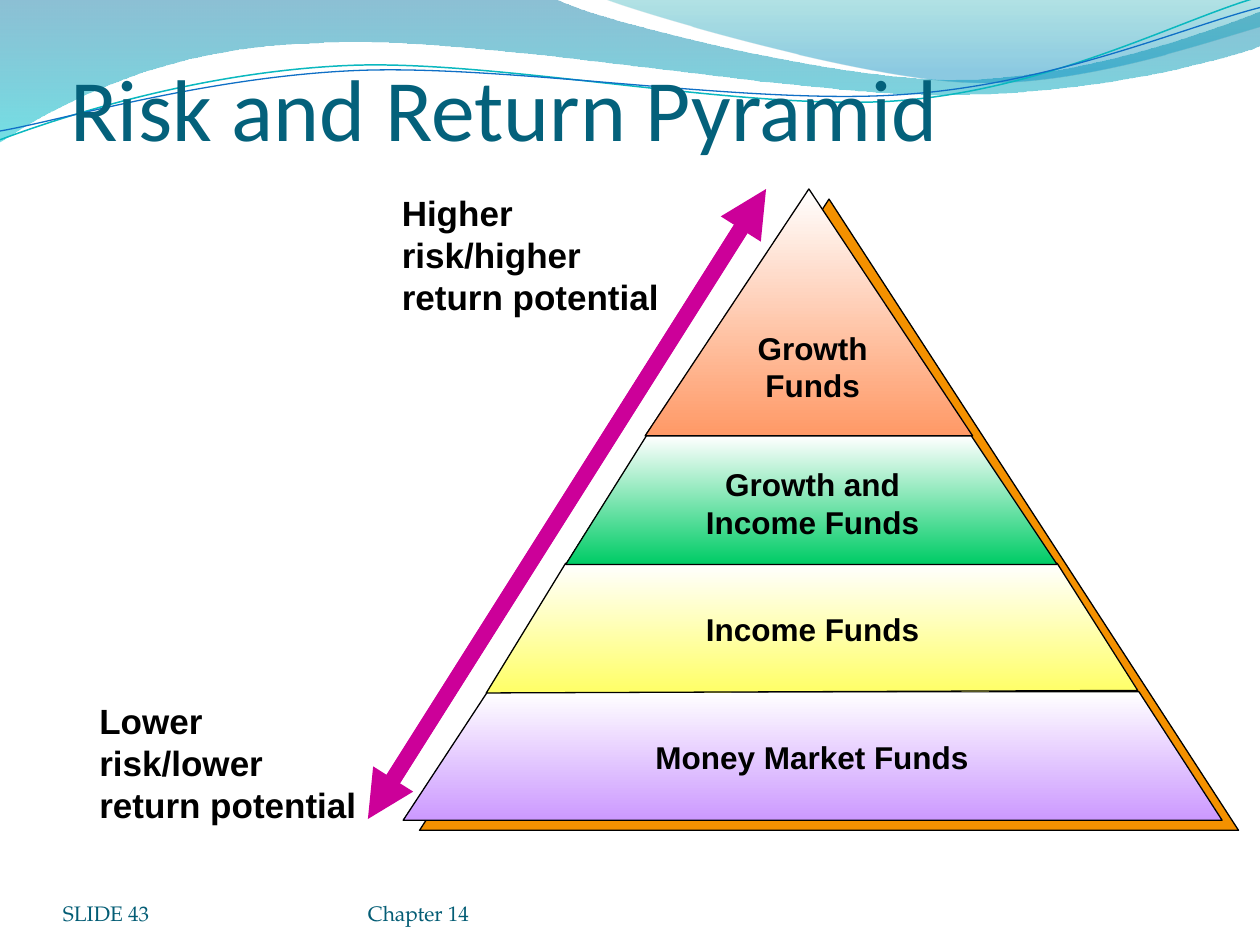
"""Build the risk and return pyramid slide."""
from lxml import etree
from pptx import Presentation, util as u
from pptx.dml.color import RGBColor
from pptx.enum import shapes, text
from pptx.oxml.ns import qn

THEME = {
    "title": ("Calibri", 50, "04617B", False),
    "footer": ("TeX Gyre Pagella", 12, "045D75", False),
    "band": ("Arial", 18, "000000", True),
    "note": ("Arial", 20, "000000", True),
    "outline": "000000", "arrow": "CC0099", "shade": "F49100",
}
TITLE = "Risk and Return Pyramid"
FOOTERS = [("SLIDE 43", (0.5, 6.95, 2.33, 0.4)),
           ("Chapter 14", (2.92, 6.95, 3.67, 0.4))]
WAVES = [
    {"paths": [[(0, 0)], [(4.4, -0.01)],
               [(4.76, 0.17), (6.64, 0.63), (7.58, 0.63)],
               [(8.53, 0.63), (9.58, 0.26), (10, 0.09)], [(10.01, 0.36)],
               [(9.83, 0.44), (8.7, 0.76), (7.46, 0.75)],
               [(6.22, 0.75), (3.82, 0.28), (2.57, 0.34)],
               [(1.29, 0.36), (0.46, 0.83), (-0.01, 1.13)]],
     "grad": [(0, "0074A1", 45), (1, "00C6CF", 55)]},
    {"paths": [[(4.79, -0.01)], [(5.09, 0.11), (6.82, 0.62), (7.69, 0.65)],
               [(8.56, 0.69), (9.61, 0.32), (10, 0.21)], [(10, 0)]],
     "grad": [(0, "00A1A9", 30), (0.8, "008BBF", 45)]},
    {"paths": [[(0, 1.11)], [(0.48, 0.93), (1.58, 0.57), (2.77, 0.52)],
               [(3.95, 0.47), (5.93, 0.89), (7.13, 0.8)],
               [(8.33, 0.71), (9.38, 0.15), (9.98, -0.02)]],
     "line": ("0AB8BF", 0.85)},
    {"paths": [[(0, 1.04)], [(0.47, 0.96), (1.64, 0.61), (2.83, 0.56)],
               [(4.03, 0.51), (5.97, 0.84), (7.17, 0.75)],
               [(8.36, 0.67), (9.41, 0.21), (10, 0.06)]],
     "line": ("0F6FC6", 0.75)},
]
SHADE_BOX = (3.33, 1.58, 6.5, 5.01)
PEAK = ("FF9966", (5.12, 1.5, 2.6, 1.96))
BANDS = [
    ("CC99FF", [(3.2, 6.51), (3.87, 5.49), (9.04, 5.49), (9.7, 6.51)]),
    ("FFFF66", [(3.86, 5.5), (4.49, 4.47), (8.39, 4.47), (9.03, 5.48)]),
    ("00CC66", [(4.49, 4.48), (5.13, 3.46), (7.71, 3.46), (8.39, 4.48)]),
]
LABELS = [("Money Market Funds", (5.1, 5.81, 2.69, 0.4)),
          ("Income Funds", (5.5, 4.79, 1.9, 0.4)),
          ("Growth and\nIncome Funds", (5.5, 3.64, 1.9, 0.7)),
          ("Growth\nFunds", (5.91, 2.56, 1.08, 0.7))]
ARROWS = [
    ((6.08, 1.5), (3.08, 6.25), "headEnd",
     "Higher risk/higher\nreturn potential", (3.09, 1.47, 2.58, 0.77)),
    ((5.92, 1.75), (2.92, 6.5), "tailEnd",
     "Lower risk/lower\nreturn potential", (0.69, 5.5, 2.39, 0.77)),
]


def rgb(color):
    return RGBColor.from_string(color)


def inches(values):
    return [u.Inches(v) for v in values]


def set_line(sp, color, width):
    sp.line.color.rgb = rgb(color)
    sp.line.width = u.Pt(width)


def set_gradient(sp, stops):
    sp.fill.gradient()
    sp.fill.gradient_angle = 270
    for stop, (position, color, _) in zip(sp.fill.gradient_stops, stops):
        stop.position = position
        stop.color.rgb = rgb(color)
    for clr, (_, _, opacity) in zip(sp._element.spPr.iter(qn("a:srgbClr")), stops):
        if opacity < 100:
            etree.SubElement(clr, qn("a:alpha"), val=str(opacity * 1000))


def set_band(sp, color):
    sp.shadow.inherit = False
    set_gradient(sp, [(0, "FFFFFF", 100), (1, color, 100)])
    set_line(sp, THEME["outline"], 0.75)


def add_outline(s, points, close=True):
    points = [inches(p) for p in points]
    builder = s.shapes.build_freeform(*points[0])
    builder.add_line_segments(points[1:], close=close)
    sp = builder.convert_to_shape()
    sp.shadow.inherit = False
    return sp


def bend(sp, paths):
    segments = iter(list(sp._element.spPr.iter(qn("a:lnTo"))))
    for path in paths[1:]:
        lines = [next(segments) for _ in path]
        if len(lines) == 3:
            lines[0].tag = qn("a:cubicBezTo")
            for line in lines[1:]:
                lines[0].append(line[0])
                line.getparent().remove(line)


def add_wave(s, wave):
    points = [p for path in wave["paths"] for p in path]
    sp = add_outline(s, points, close="grad" in wave)
    bend(sp, wave["paths"])
    if "grad" in wave:
        set_gradient(sp, wave["grad"])
        sp.line.fill.background()
    else:
        sp.fill.background()
        set_line(sp, *wave["line"])


def write(sp, content, style, align=text.PP_ALIGN.LEFT):
    font, size, color, bold = THEME[style]
    tf = sp.text_frame
    tf.text = content
    for p in tf.paragraphs:
        p.alignment = align
        for r in p.runs:
            r.font.name, r.font.size, r.font.bold = font, u.Pt(size), bold
            r.font.color.rgb = rgb(color)
    return tf


def set_bottom(tf, top=0):
    tf.vertical_anchor = text.MSO_ANCHOR.BOTTOM
    tf.margin_left = tf.margin_right = tf.margin_bottom = 0
    tf.margin_top = u.Inches(top)


def add_text(s, content, box, style, wrap=True, align=text.PP_ALIGN.LEFT):
    tf = write(s.shapes.add_textbox(*inches(box)), content, style, align)
    tf.word_wrap = wrap
    return tf


def add_title(s):
    sp = s.shapes.title
    sp.left, sp.top, sp.width, sp.height = inches((0.56, 0.01, 9.08, 1.25))
    tf = write(sp, TITLE, "title")
    tf.auto_size = text.MSO_AUTO_SIZE.NONE
    set_bottom(tf, 0.05)
    sp._element.getparent().append(sp._element)


def add_pyramid(s):
    triangle = shapes.MSO_SHAPE.ISOSCELES_TRIANGLE
    sp = s.shapes.add_shape(triangle, *inches(SHADE_BOX))
    sp.shadow.inherit = False
    sp.fill.solid()
    sp.fill.fore_color.rgb = rgb(THEME["shade"])
    set_line(sp, THEME["outline"], 0.75)
    color, box = PEAK
    set_band(s.shapes.add_shape(triangle, *inches(box)), color)
    for color, points in BANDS:
        set_band(add_outline(s, points), color)
    for label, box in LABELS:
        add_text(s, label, box, "band", False, text.PP_ALIGN.CENTER)


def add_arrow(s, start, end, tip, note, box):
    sp = s.shapes.add_connector(shapes.MSO_CONNECTOR.STRAIGHT, *inches(start + end))
    set_line(sp, THEME["arrow"], 9)
    etree.SubElement(sp.line._get_or_add_ln(), qn(f"a:{tip}"), type="triangle")
    etree.SubElement(sp._element.spPr, qn("a:effectLst"))
    add_text(s, note, box, "note").margin_right = u.Inches(0.2)


def main():
    prs = Presentation()
    prs.slide_width, prs.slide_height = inches((10, 7.5))
    s = prs.slides.add_slide(prs.slide_layouts[5])
    for wave in WAVES:
        add_wave(s, wave)
    for content, box in FOOTERS:
        set_bottom(add_text(s, content, box, "footer"))
    add_title(s)
    add_pyramid(s)
    for arrow in ARROWS:
        add_arrow(s, *arrow)
    prs.save("out.pptx")


if __name__ == "__main__":
    main()
